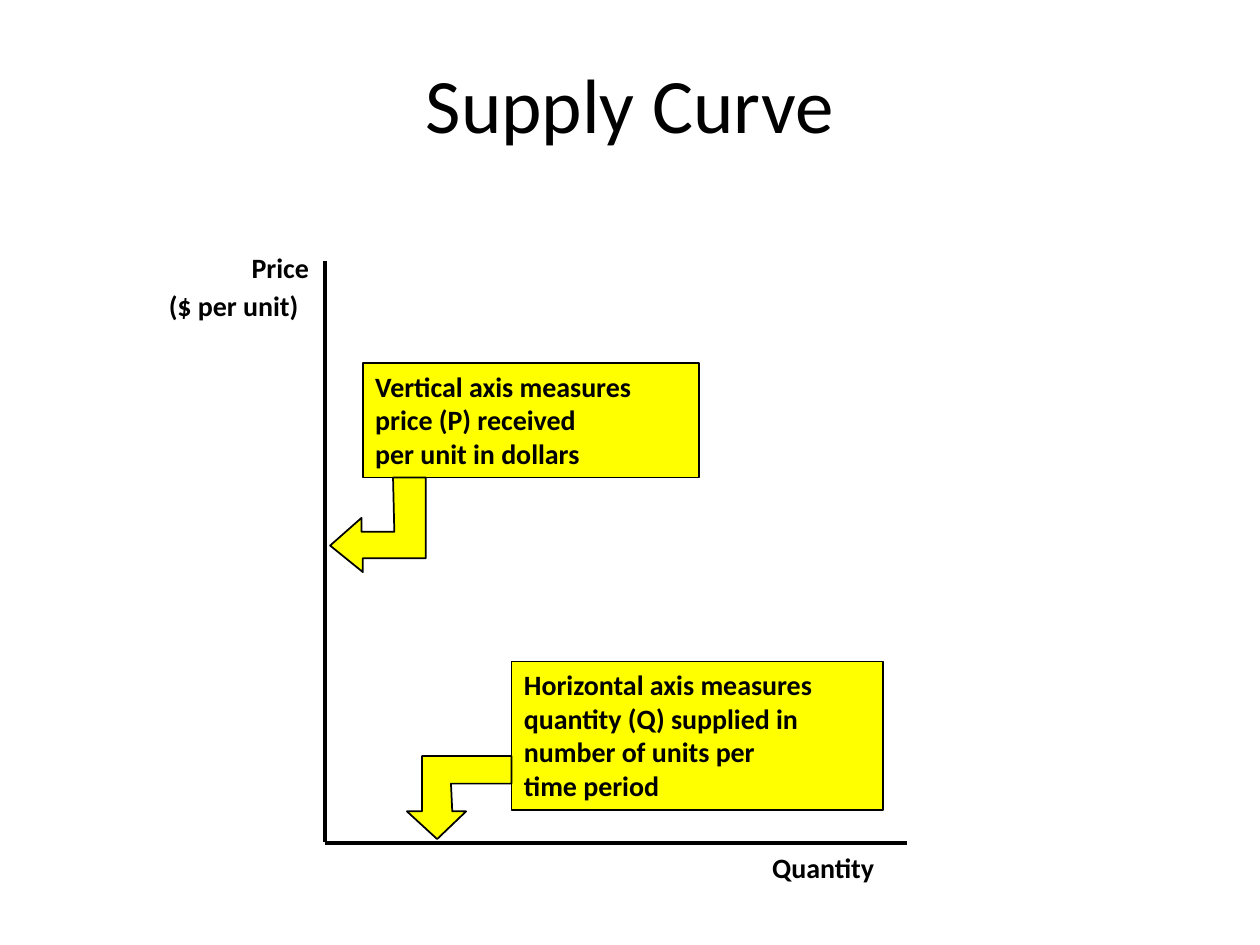
from pptx import Presentation
from pptx.dml.color import RGBColor as RGB
from pptx.enum.shapes import MSO_CONNECTOR as CONN, MSO_SHAPE as SHAPE
from pptx.enum.text import MSO_ANCHOR as ANCHOR, PP_ALIGN as ALIGN
from pptx.util import Inches, Pt
from lxml import etree

THEME = {
    "ink": RGB(0, 0, 0),
    "note": RGB(255, 255, 0),
    "outline": Pt(1),
    "axis": Pt(2),
    "title": {"name": "Calibri", "size": Pt(44), "bold": False},
    "label": {"name": "Calibri", "size": Pt(16), "bold": True},
    "space": {"name": "Times New Roman", "size": Pt(24), "bold": False},
}

TITLE = ("Supply Curve", (0.5, 0.3, 9, 1.03))

NOTES = [
    {
        "box": (4.06, 5.25, 2.95, 1.18),
        "lines": ["Horizontal axis measures", "quantity (Q) supplied in",
                  "number of units per", "time period"],
        "arrow": [(3.47, 6.66), (3.7, 6.44), (3.59, 6.44), (3.58, 6.22), (4.06, 6.22),
                  (4.06, 6), (3.35, 6), (3.35, 6.44), (3.23, 6.44)],
    },
    {
        "box": (2.88, 2.88, 2.67, 0.91),
        "lines": ["Vertical axis measures", "price (P) received", "per unit in dollars"],
        "arrow": [(2.62, 4.33), (2.87, 4.11), (2.87, 4.22), (3.13, 4.22), (3.12, 3.79),
                  (3.38, 3.79), (3.38, 4.43), (2.88, 4.43), (2.88, 4.54)],
    },
]

AXES = [(2.58, 2.07, 2.58, 6.68), (2.58, 6.69, 7.2, 6.69)]

AXIS_LABELS = [
    (["Quantity"], (6.03, 6.59, 1.18, 0.5), {"alignment": ALIGN.LEFT}),
    (["Price", "($ per unit)"], (1.1, 1.99, 1.45, 0.64),
     {"alignment": ALIGN.RIGHT, "line_spacing": 0.8}),
]


def apply(obj, formats):
    for name, value in formats.items():
        setattr(obj, name, value)


def add_run(p, text, style):
    r = p.add_run()
    r.text = text
    apply(r.font, THEME[style])
    r.font.color.rgb = THEME["ink"]


def write(sp, lines, style, anchor=ANCHOR.TOP, **formats):
    tf = sp.text_frame
    apply(tf, {"word_wrap": True, "vertical_anchor": anchor})
    for i, line in enumerate(lines):
        p = tf.paragraphs[0] if i == 0 else tf.add_paragraph()
        apply(p, {"alignment": ALIGN.LEFT, **formats})
        add_run(p, line, style)
    return tf


def add_text(s, box, lines, style, **formats):
    sp = s.shapes.add_textbox(*map(Inches, box))
    return write(sp, lines, style, **formats)


def paint(sp):
    sp.shadow.inherit = False
    sp.fill.solid()
    sp.fill.fore_color.rgb = THEME["note"]
    sp.line.color.rgb = THEME["ink"]
    sp.line.width = THEME["outline"]


def add_note(s, note):
    sp = s.shapes.add_shape(SHAPE.RECTANGLE, *map(Inches, note["box"]))
    paint(sp)
    write(sp, note["lines"], "label")
    start, *rest = [tuple(map(Inches, point)) for point in note["arrow"]]
    builder = s.shapes.build_freeform(*start)
    builder.add_line_segments(rest, close=True)
    paint(builder.convert_to_shape())


def add_axis(s, ends):
    line = s.shapes.add_connector(CONN.STRAIGHT, *map(Inches, ends))
    line.line.color.rgb = THEME["ink"]
    line.line.width = THEME["axis"]
    props = line._element.spPr
    etree.SubElement(props, "{http://schemas.openxmlformats.org/drawingml/2006/main}effectLst")


def main():
    prs = Presentation()
    apply(prs, {"slide_width": Inches(10), "slide_height": Inches(7.5)})
    s = prs.slides.add_slide(prs.slide_layouts[6])

    text, box = TITLE
    add_text(s, box, [text], "title", anchor=ANCHOR.MIDDLE, alignment=ALIGN.CENTER)
    for note in NOTES:
        add_note(s, note)
    for ends in AXES:
        add_axis(s, ends)
    for lines, box, formats in AXIS_LABELS:
        tf = add_text(s, box, lines, "label", **formats)
        add_run(tf.paragraphs[-1], " ", "space")

    prs.save("out.pptx")


if __name__ == "__main__":
    main()
